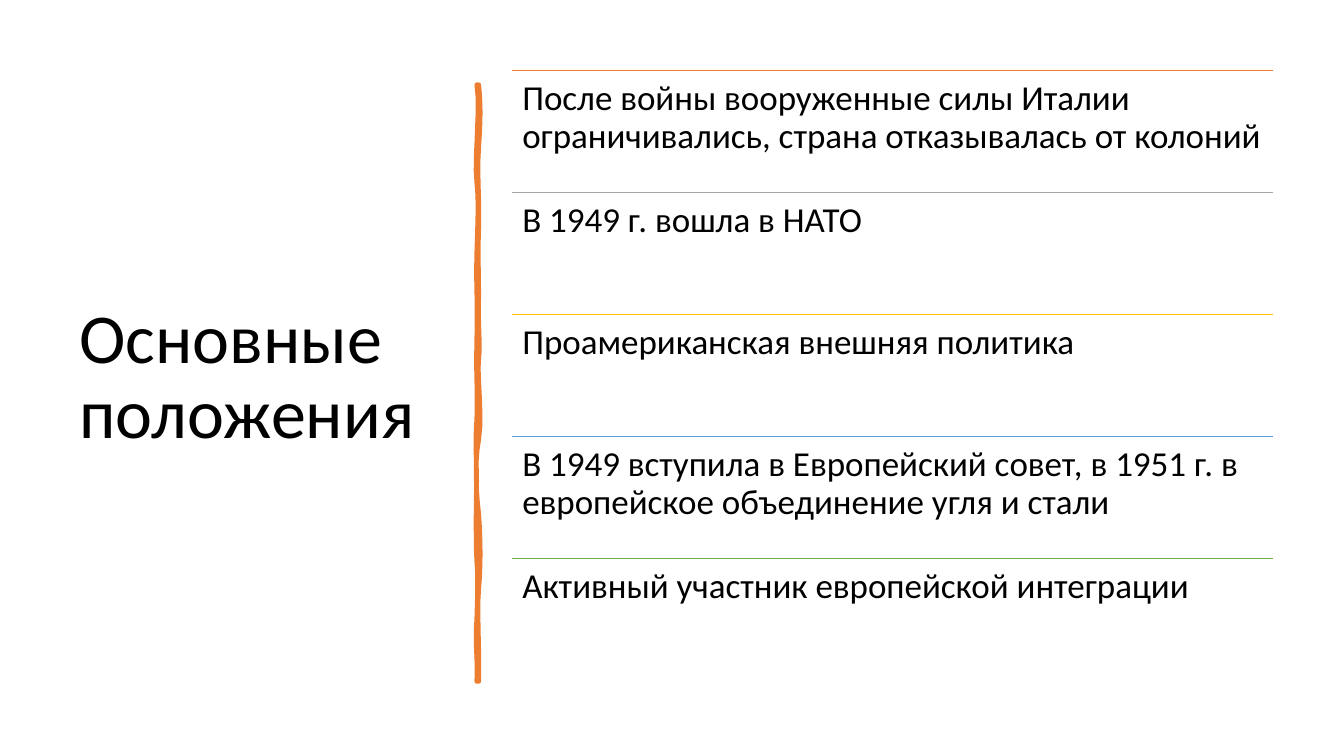
from dataclasses import dataclass

from lxml import etree
from pptx import Presentation
from pptx import util as u
from pptx.dml.color import RGBColor
from pptx.enum import shapes, text
from pptx.oxml.ns import qn


@dataclass(frozen=True)
class Theme:
    font: str = "Calibri"
    ink: str = "000000"
    brush: str = "ED7D31"
    rules: tuple = ("ED7D31", "A5A5A5", "FFC000", "5B9BD5", "70AD47")
    title_size: float = 50
    point_size: float = 25
    rule_weight: float = 1
    brush_weight: float = 3.25
    spacing: float = 0.9


class Composer:
    COLUMNS, ROWS = 160, 90

    def __init__(self, deck, theme):
        self.theme = theme
        self.page = deck.slides.add_slide(deck.slide_layouts[6])
        self.column = deck.slide_width / self.COLUMNS
        self.row = deck.slide_height / self.ROWS

    def place(self, column, row):
        return round(column * self.column), round(row * self.row)

    def words(self, content, column, row, columns, rows, size, inset, anchor):
        box = self.page.shapes.add_textbox(
            *self.place(column, row), *self.place(columns, rows))
        frame = box.text_frame
        frame.word_wrap = True
        frame.vertical_anchor = anchor
        frame.margin_left = frame.margin_right = u.Inches(0.1)
        frame.margin_top = frame.margin_bottom = u.Inches(inset)
        para = frame.paragraphs[0]
        para.text = content
        para.line_spacing = self.theme.spacing
        para.font.name = self.theme.font
        para.font.size = u.Pt(size)
        para.font.color.rgb = RGBColor.from_string(self.theme.ink)

    def rule(self, column, row, columns, color):
        line = self.page.shapes.add_connector(
            shapes.MSO_CONNECTOR.STRAIGHT,
            *self.place(column, row), *self.place(column + columns, row))
        line.line.color.rgb = RGBColor.from_string(color)
        line.line.width = u.Pt(self.theme.rule_weight)
        etree.SubElement(line._element.spPr, qn("a:effectLst"))

    def brush(self, start, curves, steps=6):
        points = []
        pen = start
        for curve in curves:
            knots = [pen, curve[:2], curve[2:4], curve[4:]]
            for step in range(1, steps + 1):
                t = step / steps
                weights = ((1 - t) ** 3, 3 * t * (1 - t) ** 2,
                           3 * t ** 2 * (1 - t), t ** 3)
                points.append(self.place(*(
                    sum(w * knot[axis] for w, knot in zip(weights, knots))
                    for axis in (0, 1))))
            pen = curve[4:]
        builder = self.page.shapes.build_freeform(*self.place(*start))
        builder.add_line_segments(points, close=True)
        stroke = builder.convert_to_shape()
        stroke.shadow.inherit = False
        color = RGBColor.from_string(self.theme.brush)
        stroke.fill.solid()
        stroke.fill.fore_color.rgb = color
        stroke.line.color.rgb = color
        stroke.line.width = u.Pt(self.theme.brush_weight)
        etree.SubElement(stroke.line._get_or_add_ln(), qn("a:round"))


POINTS = (
    "После войны вооруженные силы Италии ограничивались, страна отказывалась от колоний",
    "В 1949 г. вошла в НАТО",
    "Проамериканская внешняя политика",
    "В 1949 вступила в Европейский совет, в 1951 г. в европейское объединение угля и стали",
    "Активный участник европейской интеграции",
)

BRUSH_START = (57, 10.08)
BRUSH_CURVES = (
    (57.24, 12.24, 57.24, 14.28, 57, 17.52),
    (56.76, 20.76, 57.12, 23.4, 57, 27.12),
    (56.88, 30.84, 57, 31.44, 57, 35.28),
    (56.88, 39, 57.24, 41.04, 57, 42.72),
    (56.76, 44.4, 57.48, 49.68, 57, 52.32),
    (56.52, 54.84, 56.64, 58.08, 57, 61.2),
    (57.24, 64.32, 57.24, 67.68, 57, 70.08),
    (56.76, 72.36, 57.12, 78, 57, 81.12),
    (56.88, 81.12, 56.76, 81.12, 56.76, 81.12),
    (56.88, 77.52, 56.52, 77.28, 56.76, 73.56),
    (56.88, 69.96, 56.88, 68.4, 56.76, 66.84),
    (56.64, 65.28, 56.64, 59.4, 56.76, 57.24),
    (56.76, 55.08, 56.52, 53.4, 56.76, 49.8),
    (56.88, 46.32, 56.64, 44.76, 56.76, 40.2),
    (56.88, 35.76, 56.64, 33.72, 56.76, 30),
    (56.88, 26.16, 57, 24, 56.76, 21.72),
    (56.4, 19.56, 57.24, 12.48, 56.76, 10.08),
    (56.88, 10.08, 56.88, 10.08, 57, 10.08),
)


def main():
    deck = Presentation()
    deck.slide_width, deck.slide_height = u.Inches(13.333), u.Inches(7.5)
    theme = Theme()
    composer = Composer(deck, theme)
    composer.words("Основные положения", 8.28, 8.4, 44.88, 73.32,
                   theme.title_size, 0.05, text.MSO_ANCHOR.MIDDLE)
    composer.brush(BRUSH_START, BRUSH_CURVES)
    left, top, width, pitch = 61, 8.4, 90.6, 14.52
    for index, (point, color) in enumerate(zip(POINTS, theme.rules)):
        row = top + index * pitch
        composer.rule(left, row, width, color)
        composer.words(point, left, row, width, pitch,
                       theme.point_size, 0.1, text.MSO_ANCHOR.TOP)
    deck.save("out.pptx")


if __name__ == "__main__":
    main()
